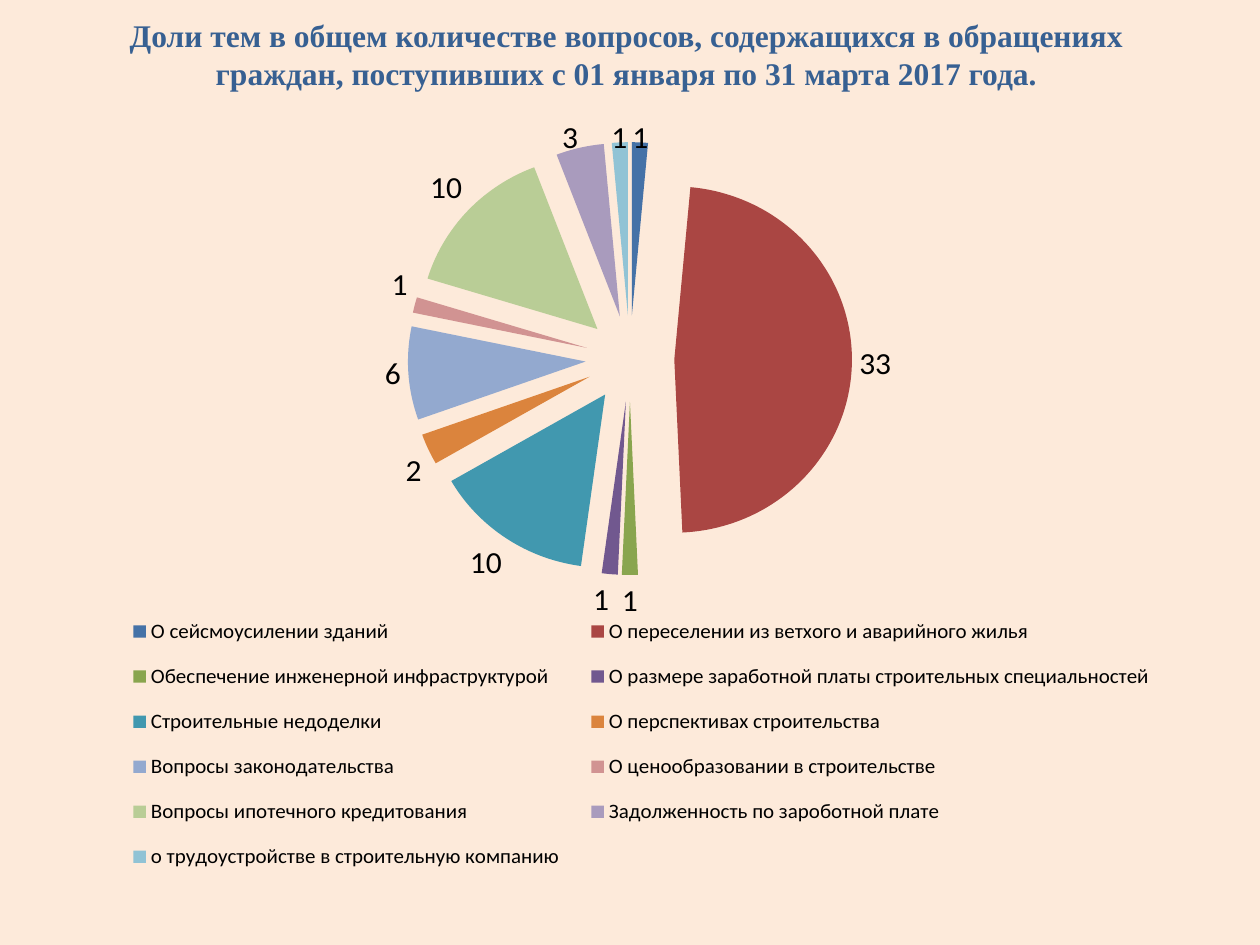
from lxml.etree import SubElement
from pptx import Presentation
from pptx.chart.data import CategoryChartData
from pptx.dml.color import RGBColor
from pptx.enum.chart import XL_CHART_TYPE, XL_LABEL_POSITION, XL_LEGEND_POSITION
from pptx.enum.text import MSO_ANCHOR, PP_ALIGN
from pptx.oxml.ns import qn
from pptx.util import Pt

TITLE = ("Доли тем в общем количестве вопросов, содержащихся в обращениях "
         "граждан, поступивших с 01 января по 31 марта 2017 года.")
TOPICS = [
    ("О сейсмоусилении зданий", 1, "4572A7"),
    ("О переселении из ветхого и аварийного жилья", 33, "AA4643"),
    ("Обеспечение инженерной инфраструктурой", 1, "89A54E"),
    ("О размере заработной платы строительных специальностей", 1, "71588F"),
    ("Строительные недоделки", 10, "4198AF"),
    ("О перспективах строительства", 2, "DB843D"),
    ("Вопросы законодательства", 6, "93A9CF"),
    ("О ценообразовании в строительстве", 1, "D19392"),
    ("Вопросы ипотечного кредитования", 10, "B9CD96"),
    ("Задолженность по зароботной плате", 3, "A99BBD"),
    ("о трудоустройстве в строительную компанию", 1, "91C3D5"),
]


def paint(color_format, hex_color):
    color_format.rgb = RGBColor.from_string(hex_color)


def style_font(font, name, size, hex_color, bold=False):
    font.name = name
    font.size = Pt(size)
    font.bold = bold
    paint(font.color, hex_color)


def set_layout(parent, index, left, top, width, height, inner=False):
    for old_layout in parent.findall(qn("c:layout")):
        parent.remove(old_layout)
    layout = SubElement(parent, qn("c:layout"))
    parent.insert(index, layout)
    manual = SubElement(layout, qn("c:manualLayout"))
    settings = [("layoutTarget", "inner")] if inner else []
    settings += [("xMode", "edge"), ("yMode", "edge"),
                 ("x", left), ("y", top), ("w", width), ("h", height)]
    for tag, value in settings:
        SubElement(manual, qn(f"c:{tag}")).set("val", str(value))


def add_title(slide, left, top, width, height):
    title = slide.shapes.add_textbox(Pt(left), Pt(top), Pt(width), Pt(height))
    frame = title.text_frame
    frame.word_wrap = True
    frame.vertical_anchor = MSO_ANCHOR.MIDDLE
    frame.text = TITLE
    heading = frame.paragraphs[0]
    heading.alignment = PP_ALIGN.CENTER
    style_font(heading.runs[0].font, "Times New Roman", 18, "376092", True)


def add_topic_pie(slide, left, top, width, height):
    topic_data = CategoryChartData()
    topic_data.categories = [topic for topic, _, _ in TOPICS]
    topic_data.add_series("Series 1", [count for _, count, _ in TOPICS])
    pie = slide.shapes.add_chart(
        XL_CHART_TYPE.PIE, Pt(left), Pt(top), Pt(width), Pt(height), topic_data
    ).chart
    pie.has_title = False
    style_font(pie.font, "Calibri", 18, "000000")
    set_layout(pie.plots[0]._element.getparent(), 0, 0, 0.03, 1, 0.55, inner=True)

    plot = pie.plots[0]
    plot.vary_by_categories = True
    shares = plot.series[0]
    for index, (_, _, hex_color) in enumerate(TOPICS):
        slice_fill = shares.points[index].format.fill
        slice_fill.solid()
        paint(slice_fill.fore_color, hex_color)
    explosion = SubElement(shares._element, qn("c:explosion"))
    explosion.set("val", "25")
    shares._element.find(qn("c:dPt")).addprevious(explosion)

    counts = shares.data_labels
    counts.show_value = True
    counts.position = XL_LABEL_POSITION.OUTSIDE_END
    style_font(counts.font, "Calibri", 18, "000000")

    pie.has_legend = True
    legend = pie.legend
    legend.position = XL_LEGEND_POSITION.BOTTOM
    legend.include_in_layout = False
    style_font(legend.font, "Calibri", 12, "000000")
    set_layout(legend._element, 1, 0.04, 0.61, 0.94, 0.37)


def main():
    presentation = Presentation()
    presentation.slide_width = Pt(720)
    presentation.slide_height = Pt(540)
    slide = presentation.slides.add_slide(presentation.slide_layouts[6])
    background = slide.background.fill
    background.solid()
    paint(background.fore_color, "FDEADA")
    add_title(slide, 34, 0, 648, 62)
    add_topic_pie(slide, 36, 56, 648, 461.5)
    presentation.save("out.pptx")


if __name__ == "__main__":
    main()
